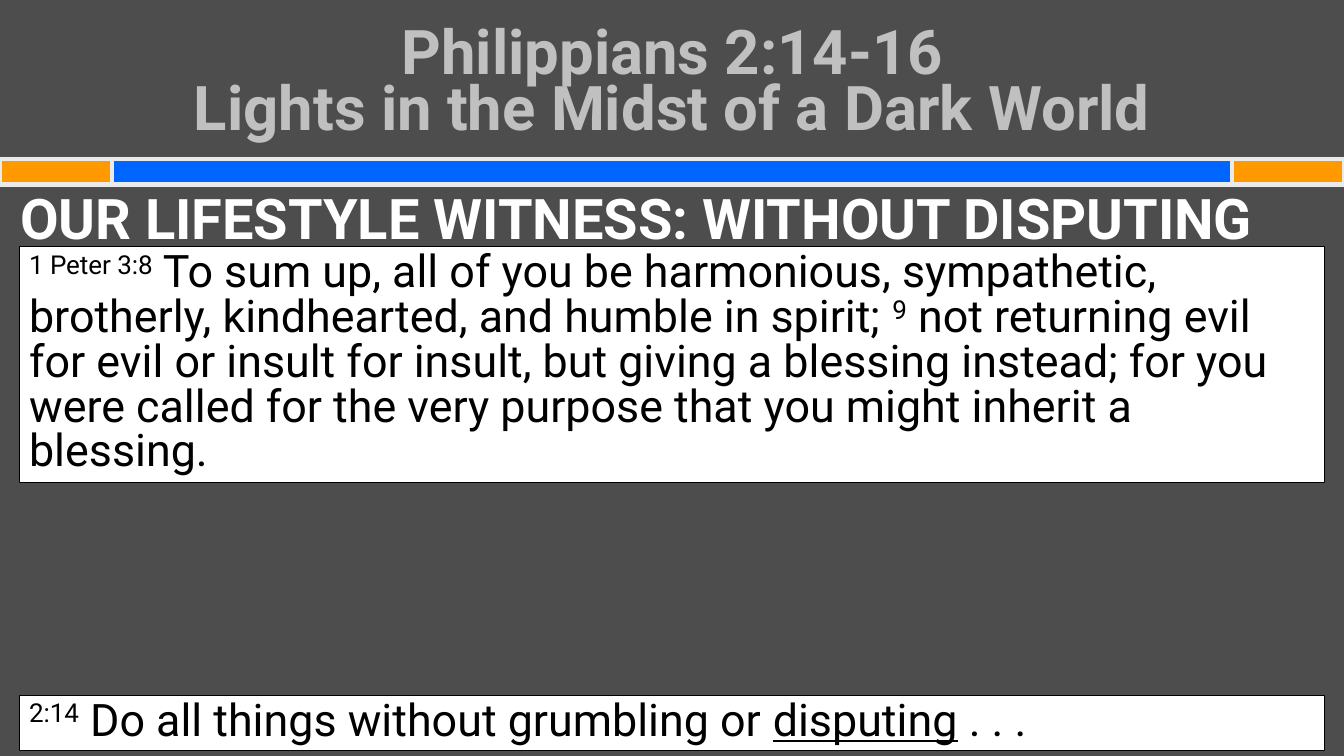
from pptx import Presentation
from pptx import util as u
from pptx.dml.color import RGBColor
from pptx.enum import shapes, text

deck = Presentation()
deck.slide_width, deck.slide_height = u.Inches(13.33), u.Inches(7.5)
page = deck.slides.add_slide(deck.slide_layouts[5])
page.background.fill.solid()
page.background.fill.fore_color.rgb = RGBColor.from_string("4D4D4D")


def add_box(left, top, width, height, fill, line, weight):
    box = page.shapes.add_shape(
        shapes.MSO_SHAPE.RECTANGLE, *map(u.Inches, (left, top, width, height)))
    box.shadow.inherit = False
    box.fill.solid()
    box.fill.fore_color.rgb = RGBColor.from_string(fill)
    box.line.color.rgb = RGBColor.from_string(line)
    box.line.width = u.Pt(weight)
    return box


def style(span, size, color, bold=False):
    span.font.name = "Roboto"
    span.font.size = u.Pt(size)
    span.font.bold = bold
    span.font.color.rgb = RGBColor.from_string(color)


# Divider: blue bar with orange ends
for left, width, fill in ((0, 13.33, "0066FF"), (0, 1.11, "FF9900"), (12.22, 1.11, "FF9900")):
    add_box(left, 1.58, width, 0.25, fill, "EAEAEA", 3)

# Title
title = page.shapes.title
title.left, title.top, title.width, title.height = map(u.Inches, (0.67, 0.3, 12, 1.12))
title.text_frame.vertical_anchor = text.MSO_ANCHOR.MIDDLE
title.text_frame.auto_size = text.MSO_AUTO_SIZE.NONE
para = title.text_frame.paragraphs[0]
para.text = "Philippians 2:14-16\vLights in the Midst of a Dark World"
para.alignment = text.PP_ALIGN.CENTER
para.line_spacing = u.Pt(40)
for span in para.runs:
    style(span, 44, "C0C0C0", True)

# Section heading
heading = page.shapes.add_textbox(*map(u.Inches, (0.1, 1.95, 12.95, 0.5)))
heading.text_frame.word_wrap = True
para = heading.text_frame.paragraphs[0]
para.text = "OUR LIFESTYLE WITNESS: WITHOUT DISPUTING"
para.line_spacing = 0.7
style(para.runs[0], 40, "FFFFFF", True)

# Scripture boxes: each run is marked as verse number, underlined or plain
verses = (
    (6.9, 0.55, (
        ("2:14", "verse"),
        (" Do all things without grumbling or ", "plain"),
        ("disputing", "underlined"),
        (" . . .", "plain"))),
    (2.45, 2.34, (
        ("1 Peter 3:8", "verse"),
        (" To sum up, all of you be harmonious, sympathetic, brotherly, "
         "kindhearted, and humble in spirit; ", "plain"),
        ("9", "verse"),
        (" not returning evil for evil or insult for insult, but giving a "
         "blessing instead; for you were called for the very purpose that "
         "you might inherit a blessing.", "plain"))),
)
for top, height, parts in verses:
    box = add_box(0.19, top, 12.95, height, "FFFFFF", "000000", 0.75)
    frame = box.text_frame
    frame.word_wrap = True
    frame.auto_size = text.MSO_AUTO_SIZE.SHAPE_TO_FIT_TEXT
    frame.vertical_anchor = text.MSO_ANCHOR.TOP
    para = frame.paragraphs[0]
    para.alignment = text.PP_ALIGN.LEFT
    para.line_spacing = u.Pt(32)
    for words, kind in parts:
        span = para.add_run()
        span.text = words
        style(span, 32, "000000")
        if kind == "verse":
            span.font._element.set("baseline", "30000")
        elif kind == "underlined":
            span.font.underline = True

deck.save("out.pptx")
